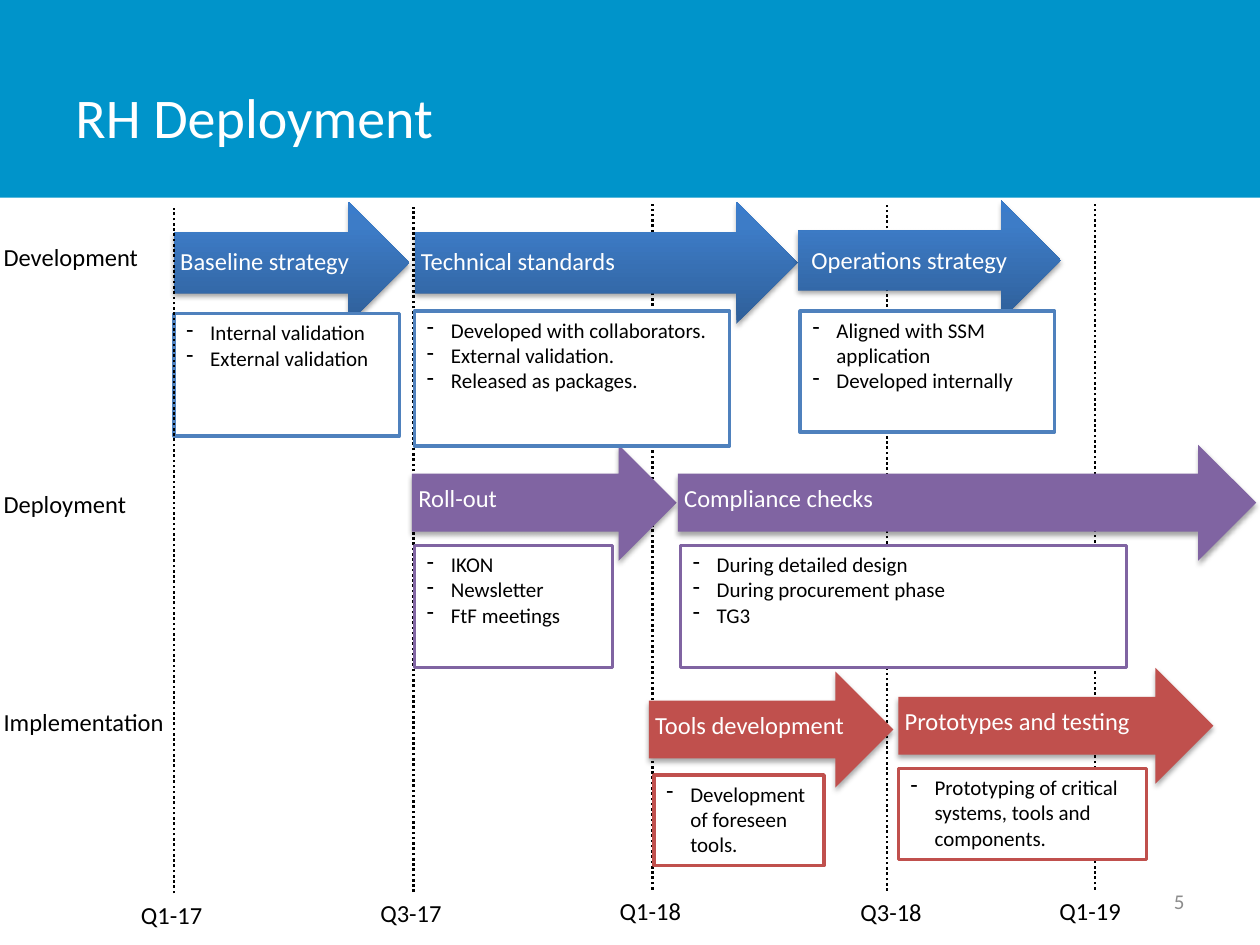
from dataclasses import dataclass

from lxml import etree
from pptx import Presentation
from pptx.dml.color import RGBColor
from pptx.enum.dml import MSO_LINE
from pptx.enum.shapes import MSO_CONNECTOR as CONN, MSO_SHAPE as SHAPE
from pptx.enum.text import MSO_ANCHOR as ANCHOR, PP_ALIGN as ALIGN
from pptx.oxml import parse_xml
from pptx.oxml.ns import nsdecls, qn
from pptx.util import Inches, Pt


@dataclass(frozen=True)
class Theme:
    """Colours, font and type sizes of the slide."""
    font: str = "Calibri"
    banner: str = "0094CA"
    white: str = "FFFFFF"
    black: str = "000000"
    grey: str = "8C8C8C"
    blue: str = "4F81BD"
    purple: str = "8064A2"
    red: str = "C0504D"
    gradient: tuple = ((0, "2F5F99"), (80, "3D7CC7"), (100, "3A7CCB"))
    title: int = 32
    label: int = 14
    body: int = 12


T = Theme()
LABEL_INSETS = (0.05, 0.05, 0.28, 0.18)

QUARTERS = [
    ("Q3-17", 3.28, 7.08, 2.92),
    ("Q1-18", 5.18, 7.06, 4.82),
    ("Q3-18", 7.04, 7.07, 6.73),
    ("Q1-19", 8.69, 7.06, 8.31),
]
FIRST_QUARTER = ("Q1-17", 1.38, 7.09, 1.02)

TRACKS = [
    ("Development", (-0.07, 1.87, 1.28, 0.34), T.blue, T.gradient, 0.26, [
        ("Baseline strategy", (1.38, 1.6, 1.87, 0.97), 0, 1.72,
         (1.38, 2.49, 1.79, 0.97), ["Internal validation", "External validation"]),
        ("Technical standards", (3.29, 1.6, 3.04, 0.97), 0, 2.92,
         (3.29, 2.47, 2.5, 1.07),
         ["Developed with collaborators.", "External validation.", "Released as packages."]),
        ("Operations strategy", (6.33, 1.59, 2.09, 0.95), 0.06, 2.71,
         (6.35, 2.47, 2.02, 0.96), ["Aligned with SSM application", "Developed internally"]),
    ]),
    ("Deployment", (-0.07, 3.83, 1.18, 0.34), T.purple, None, 0.21, [
        ("Roll-out", (3.27, 3.53, 2.1, 0.92), 0, 2.19,
         (3.29, 4.33, 1.57, 0.97), ["IKON", "Newsletter", "FtF meetings"]),
        ("Compliance checks", (5.38, 3.53, 4.59, 0.92), 0, 4.01,
         (5.4, 4.33, 3.54, 0.97),
         ["During detailed design", "During procurement phase", "TG3"]),
    ]),
    ("Implementation", (-0.07, 5.56, 1.49, 0.34), T.red, None, 0.21, [
        ("Prototypes and testing", (7.13, 5.3, 2.5, 0.92), 0, 2.2,
         (7.13, 6.1, 1.97, 0.72),
         ["Prototyping of critical systems, tools and components."]),
        ("Tools development", (5.15, 5.33, 1.94, 0.92), 0, 2.61,
         (5.19, 6.15, 1.35, 0.72), ["Development of foreseen tools."]),
    ]),
]


def inches(box):
    """Convert a box in inches to lengths."""
    return [Inches(v) for v in box]


def write(tf, lines, size=T.label, color=T.black, align=ALIGN.LEFT, anchor=ANCHOR.TOP,
          wrap=True, insets=(0.1, 0.05, 0.1, 0.05), spacing=None, bullet=None):
    """Fill a text frame with one paragraph per line."""
    tf.word_wrap, tf.vertical_anchor = wrap, anchor
    tf.margin_left, tf.margin_top, tf.margin_right, tf.margin_bottom = inches(insets)
    for i, line in enumerate(lines):
        p = tf.add_paragraph() if i else tf.paragraphs[0]
        p.alignment = align
        if spacing:
            p.line_spacing = spacing
        if bullet:
            pPr = p._p.get_or_add_pPr()
            pPr.set("marL", str(Inches(0.19)))
            pPr.set("indent", str(Inches(-0.19)))
            etree.SubElement(pPr, qn("a:buChar")).set("char", bullet)
        r = p.add_run()
        r.text = line
        r.font.name, r.font.size = T.font, Pt(size)
        r.font.color.rgb = RGBColor.from_string(color)


def add_text(slide, box, text, **fmt):
    """Add a text box holding one line of text."""
    write(slide.shapes.add_textbox(*inches(box)).text_frame, [text], **fmt)


def add_shape(slide, kind, box, fill, line=None):
    """Add a flat preset shape with an optional outline."""
    sp = slide.shapes.add_shape(kind, *inches(box))
    sp.shadow.inherit = False
    sp.fill.solid()
    sp.fill.fore_color.rgb = RGBColor.from_string(fill)
    if line:
        sp.line.color.rgb = RGBColor.from_string(line)
        sp.line.width = Pt(2)
    else:
        sp.line.fill.background()
    return sp


def add_header(slide, box, title):
    """Draw the banner and its title."""
    add_shape(slide, SHAPE.RECTANGLE, box, T.banner)
    left, top, _, height = box
    add_text(slide, (left + 0.5, top + 0.3, 7.81, height - 0.32), title,
             size=T.title, color=T.white, anchor=ANCHOR.MIDDLE)


def add_quarter(slide, name, x, bottom, label_left):
    """Draw a dotted quarter line with its label below."""
    ln = slide.shapes.add_connector(
        CONN.STRAIGHT, *inches((x, bottom, x, bottom - 5.44)))
    ln.line.color.rgb = RGBColor.from_string(T.black)
    ln.line.width, ln.line.dash_style = Pt(1.5), MSO_LINE.ROUND_DOT
    etree.SubElement(ln._element.spPr, qn("a:effectLst"))
    add_text(slide, (label_left, bottom, 0.69, 0.34), name, wrap=False)


def add_arrow(slide, box, text, color, gradient, label_shift, label_width):
    """Draw a shadowed phase arrow with its label."""
    sp = add_shape(slide, SHAPE.RIGHT_ARROW, box, color)
    spPr = sp._element.spPr
    if gradient:
        stops = "".join(f'<a:gs pos="{pos * 1000}"><a:srgbClr val="{c}"/></a:gs>'
                        for pos, c in gradient)
        spPr.replace(spPr.find(qn("a:solidFill")), parse_xml(
            f'<a:gradFill {nsdecls("a")} rotWithShape="1"><a:gsLst>{stops}</a:gsLst>'
            '<a:lin ang="16200000" scaled="0"/></a:gradFill>'))
    spPr.find(qn("a:effectLst")).append(parse_xml(
        f'<a:outerShdw {nsdecls("a")} blurRad="{Pt(3.1)}" dist="{Pt(1.8)}" dir="5400000" '
        f'rotWithShape="0"><a:srgbClr val="{T.black}"><a:alpha val="35000"/></a:srgbClr>'
        '</a:outerShdw>'))
    dx, dy = label_shift
    add_text(slide, (box[0] + dx, box[1] + dy, label_width, 0.58), text, color=T.white,
             anchor=ANCHOR.MIDDLE, insets=LABEL_INSETS, spacing=0.9)


def add_details(slide, box, lines, color):
    """Draw an outlined box with a dashed list."""
    sp = add_shape(slide, SHAPE.RECTANGLE, box, T.white, color)
    write(sp.text_frame, lines, size=T.body, bullet="-")


def add_track(slide, name, name_box, color, gradient, dy, phases):
    """Draw one track: its name, then arrows, then detail boxes."""
    add_text(slide, name_box, name, wrap=False)
    for text, box, dx, label_width, _, _ in phases:
        add_arrow(slide, box, text, color, gradient, (dx, dy), label_width)
    for *_, box, lines in phases:
        add_details(slide, box, lines, color)


def main():
    """Build the deployment roadmap slide."""
    prs = Presentation()
    prs.slide_width, prs.slide_height = Inches(10), Inches(7.5)
    slide = prs.slides.add_slide(prs.slide_layouts[6])
    add_header(slide, (0, 0, 10, 1.57), "RH Deployment")
    for quarter in QUARTERS:
        add_quarter(slide, *quarter)
    add_text(slide, (7.17, 6.95, 2.33, 0.4), "5", size=T.body, color=T.grey,
             align=ALIGN.RIGHT, anchor=ANCHOR.MIDDLE)
    for track in reversed(TRACKS):
        add_track(slide, *track)
    add_quarter(slide, *FIRST_QUARTER)
    prs.save("out.pptx")


if __name__ == "__main__":
    main()
